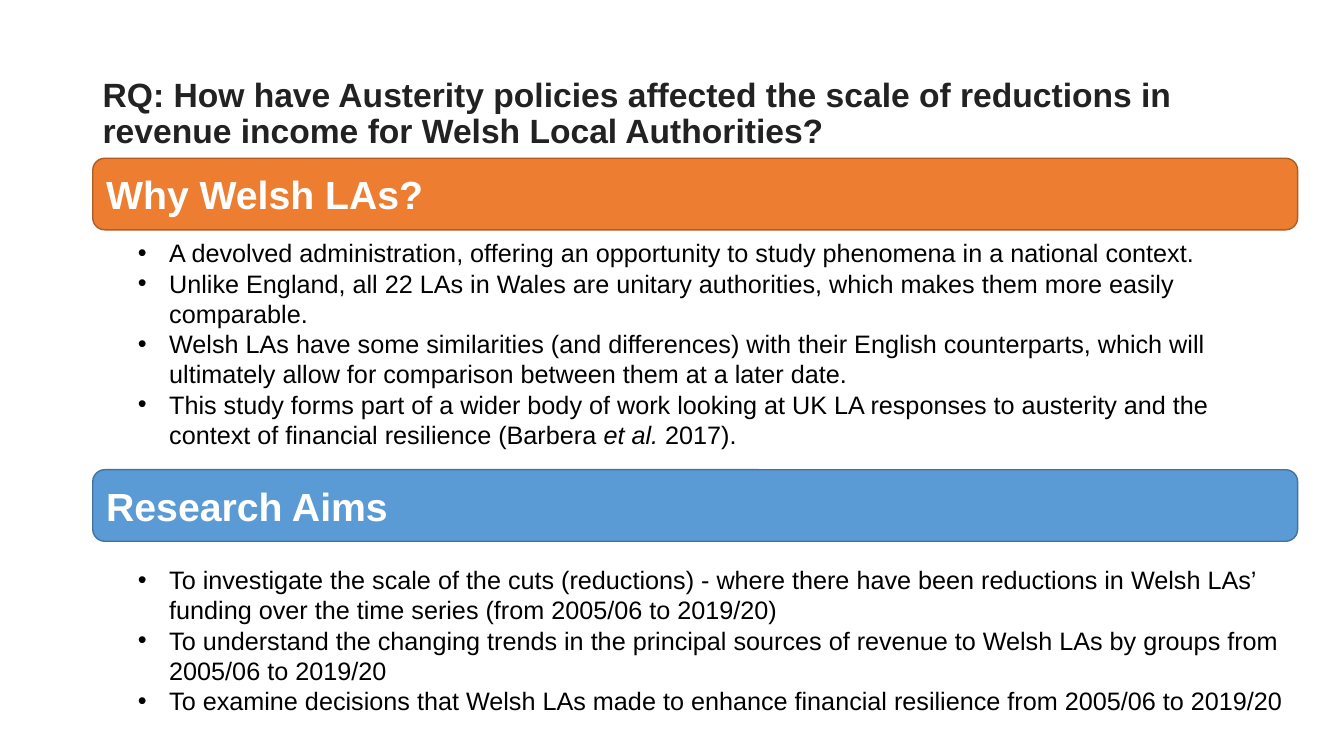
from dataclasses import dataclass

from lxml.etree import SubElement
from pptx import Presentation
from pptx.dml.color import RGBColor
from pptx.enum.shapes import MSO_SHAPE
from pptx.enum.text import MSO_ANCHOR, PP_ALIGN
from pptx.oxml.ns import qn
from pptx.shapes.base import BaseShape
from pptx.slide import Slide
from pptx.text.text import TextFrame, _Paragraph
from pptx.util import Inches, Pt

COLORS = {
    "title": "222222",
    "body": "000000",
    "head": "FFFFFF",
    "orange": "ED7D31",
    "rust": "AF5C24",
    "blue": "5B9BD5",
    "navy": "43739E",
}
FONTS = {
    "title": {"name": "Arial", "size": Pt(24), "bold": True},
    "head": {"name": "Arial", "size": Pt(28), "bold": True},
    "body": {"name": "Arial", "size": Pt(18), "bold": False},
}
FRAMES = {
    "title": {"word_wrap": True, "vertical_anchor": MSO_ANCHOR.MIDDLE},
    "head": {"word_wrap": True, "vertical_anchor": MSO_ANCHOR.MIDDLE},
    "body": {"word_wrap": True, "vertical_anchor": MSO_ANCHOR.TOP},
}
LEFT = 0.92
INDENT = 0.31


@dataclass
class Run:
    text: str
    slant: bool = False


@dataclass
class Section:
    title: str
    top: float
    fill: str
    line: str
    text_top: float
    text_high: float
    points: list[list[Run]]


SECTIONS = [
    Section("Why Welsh LAs?", 1.57, "orange", "rust", 2.31, 2.22, [
        [Run("A devolved administration, offering an opportunity to study "
             "phenomena in a national context.")],
        [Run("Unlike England, all 22 LAs in Wales are unitary authorities, "
             "which makes them more easily comparable.")],
        [Run("Welsh LAs have some similarities (and differences) with their "
             "English counterparts, which will ultimately allow for "
             "comparison between them at a later date.")],
        [Run("This study forms part of a wider body of work looking at UK LA "
             "responses to austerity and the context of financial resilience "
             "(Barbera "),
         Run("et al. ", True),
         Run("2017).")],
    ]),
    Section("Research Aims", 4.66, "blue", "navy", 5.55, 1.62, [
        [Run("To investigate the scale of the cuts (reductions) - where there "
             "have been reductions in Welsh LAs’ funding over the time series "
             "(from 2005/06 to 2019/20)")],
        [Run("To understand the changing trends in the principal sources of "
             "revenue to Welsh LAs by groups from 2005/06 to 2019/20")],
        [Run("To examine decisions that Welsh LAs made to enhance financial "
             "resilience from 2005/06 to 2019/20")],
    ]),
]


def color(name: str) -> RGBColor:
    return RGBColor.from_string(COLORS[name])


def apply(target: object, values: dict) -> None:
    for key, value in values.items():
        setattr(target, key, value)


def write(para: _Paragraph, runs: list[Run], style: str) -> None:
    para.alignment = PP_ALIGN.LEFT
    for item in runs:
        run = para.add_run()
        run.text = item.text
        apply(run.font, FONTS[style] | {"italic": item.slant})
        run.font.color.rgb = color(style)


def bullet(para: _Paragraph) -> None:
    props = para._p.get_or_add_pPr()
    props.set("marL", str(Inches(INDENT)))
    props.set("indent", str(-Inches(INDENT)))
    SubElement(props, qn("a:buFont"), typeface="Arial")
    SubElement(props, qn("a:buChar"), char="•")


def frame(shape: BaseShape, style: str) -> TextFrame:
    apply(shape.text_frame, FRAMES[style])
    return shape.text_frame


def add_title(slide: Slide, text: str) -> None:
    box = slide.shapes.add_textbox(
        Inches(LEFT), Inches(0.78), Inches(11.5), Inches(0.71))
    para = frame(box, "title").paragraphs[0]
    para.line_spacing = 0.9
    write(para, [Run(text)], "title")


def add_bar(slide: Slide, part: Section) -> None:
    bar = slide.shapes.add_shape(
        MSO_SHAPE.ROUNDED_RECTANGLE,
        Inches(LEFT), Inches(part.top), Inches(11.95), Inches(0.71))
    bar.shadow.inherit = False
    bar.fill.solid()
    bar.fill.fore_color.rgb = color(part.fill)
    bar.line.color.rgb = color(part.line)
    bar.line.width = Pt(1)
    write(frame(bar, "head").paragraphs[0], [Run(part.title)], "head")


def add_list(slide: Slide, part: Section) -> None:
    box = slide.shapes.add_textbox(
        Inches(1.27), Inches(part.text_top),
        Inches(11.6), Inches(part.text_high))
    body = frame(box, "body")
    for index, runs in enumerate(part.points):
        para = body.add_paragraph() if index else body.paragraphs[0]
        write(para, runs, "body")
        bullet(para)


def main() -> None:
    deck = Presentation()
    apply(deck, {"slide_width": Inches(13.33), "slide_height": Inches(7.5)})
    slide = deck.slides.add_slide(deck.slide_layouts[6])
    add_title(slide, "RQ: How have Austerity policies affected the scale of "
                     "reductions in revenue income for Welsh Local Authorities?")
    for part in SECTIONS:
        add_bar(slide, part)
        add_list(slide, part)
    deck.save("out.pptx")


if __name__ == "__main__":
    main()
